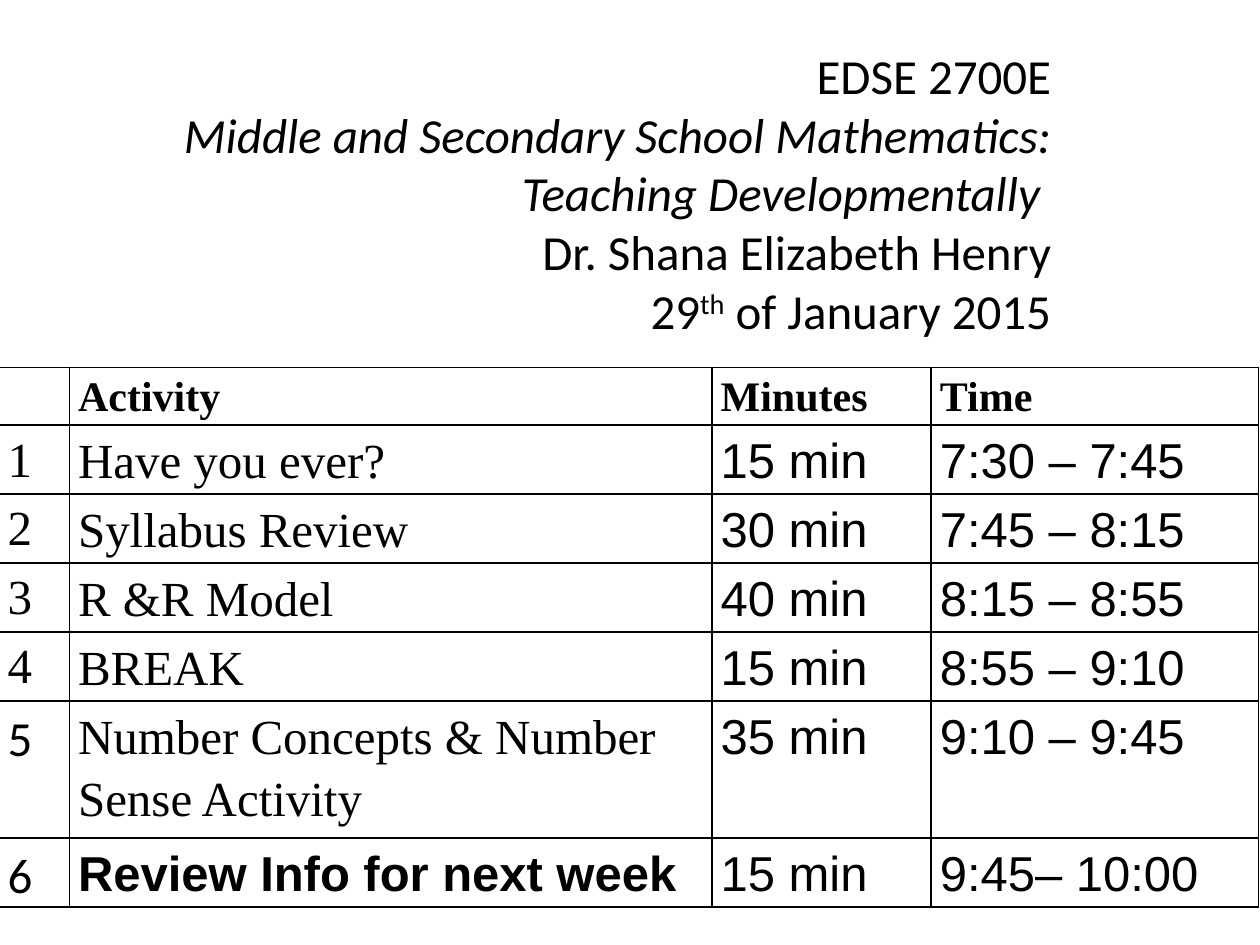
from lxml.etree import fromstring
from pptx import Presentation
from pptx.dml.color import RGBColor
from pptx.enum.text import MSO_ANCHOR, PP_ALIGN
from pptx.util import Inches, Pt

COLORS = {"ink": "000000", "rule": "000000"}
DRAWING_NS = "http://schemas.openxmlformats.org/drawingml/2006/main"
SERIF = {"name": "Times New Roman", "size": Pt(28)}
SANS = {"name": "Arial", "size": Pt(28)}
HUMANIST = {"name": "Calibri", "size": Pt(28)}
HEADING = {"name": "Times New Roman", "size": Pt(24), "bold": True}
CELL_MARGINS = {"margin_left": Inches(0.07), "margin_right": Inches(0.07),
                "margin_top": Inches(0.01), "margin_bottom": 0,
                "vertical_anchor": MSO_ANCHOR.TOP}
CELL_SPACING = {"line_spacing": 1.15, "space_after": Pt(10)}
TIGHT_SPACING = {"line_spacing": 1.15, "space_after": Pt(0)}

COURSE_LINES = [
    [("EDSE 2700E", {})],
    [("Middle and Secondary School Mathematics: Teaching Developmentally ", {"italic": True})],
    [("Dr. Shana Elizabeth Henry", {})],
    [("29", {}), ("th", {"baseline": "30000"}), (" of January 2015", {})],
]
HEADINGS = ["", "Activity", "Minutes", "Time"]
AGENDA = [
    ("Have you ever?", "15 min", "7:30 – 7:45"),
    ("Syllabus Review", "30 min", "7:45 – 8:15"),
    ("R &R Model", "40 min", "8:15 – 8:55"),
    ("BREAK", "15 min", "8:55 – 9:10"),
    ("Number Concepts & Number Sense Activity", "35 min", "9:10 – 9:45"),
    ("Review Info for next week", "15 min", "9:45– 10:00"),
]
COLUMN_SPANS = [5.6, 51, 17.4, 26]
ROW_SPANS = [6.1, 7.3, 7.3, 7.3, 7.3, 14.5, 7.3]


def apply(target, values):
    for attribute, value in values.items():
        setattr(target, attribute, value)


class AgendaSlide:
    """Holds the style and slide, placing elements on a 100 by 100 grid."""

    def __init__(self, deck):
        self.column = deck.slide_width / 100
        self.row = deck.slide_height / 100
        self.slide = deck.slides.add_slide(deck.slide_layouts[6])

    def box(self, left, top, width, height):
        return (round(left * self.column), round(top * self.row),
                round(width * self.column), round(height * self.row))

    def add_words(self, paragraph, words, style):
        run = paragraph.add_run()
        run.text = words
        values = dict(style)
        baseline = values.pop("baseline", None)
        apply(run.font, values)
        run.font.color.rgb = RGBColor.from_string(COLORS["ink"])
        if baseline:
            run.font._element.set("baseline", baseline)

    def text(self, lines, style, place):
        frame = self.slide.shapes.add_textbox(*self.box(*place)).text_frame
        frame.word_wrap = True
        for index, line in enumerate(lines):
            paragraph = frame.add_paragraph() if index else frame.paragraphs[0]
            paragraph.alignment = PP_ALIGN.RIGHT
            for words, extra in line:
                self.add_words(paragraph, words, {**style, **extra})

    def rule(self, cell):
        cell.fill.background()
        for order, side in enumerate("LRTB"):
            border = fromstring(
                f'<a:ln{side} xmlns:a="{DRAWING_NS}" w="12700"><a:solidFill>'
                f'<a:srgbClr val="{COLORS["rule"]}"/></a:solidFill></a:ln{side}>')
            cell._tc.get_or_add_tcPr().insert(order, border)

    def table(self, rows, left, top):
        place = self.box(left, top, sum(COLUMN_SPANS), sum(ROW_SPANS))
        table = self.slide.shapes.add_table(len(rows), len(COLUMN_SPANS), *place).table
        apply(table, {"first_row": False, "horz_banding": False})
        for column, span in zip(table.columns, COLUMN_SPANS):
            column.width = round(span * self.column)
        for row, span, entries in zip(table.rows, ROW_SPANS, rows):
            row.height = round(span * self.row)
            for cell, (words, style, spacing) in zip(row.cells, entries):
                apply(cell, CELL_MARGINS)
                if spacing is TIGHT_SPACING:
                    cell.margin_top = 0
                paragraph = cell.text_frame.paragraphs[0]
                apply(paragraph, spacing)
                if words:
                    self.add_words(paragraph, words, style)
                self.rule(cell)


def agenda_rows():
    yield [(heading, HEADING, TIGHT_SPACING) for heading in HEADINGS]
    for number, (activity, minutes, time) in enumerate(AGENDA, 1):
        number_style = SERIF if number < 5 else HUMANIST
        activity_style = {**SANS, "bold": True} if number == len(AGENDA) else SERIF
        yield [(str(number), number_style, TIGHT_SPACING),
               (activity, activity_style, CELL_SPACING),
               (minutes, SANS, CELL_SPACING),
               (time, SANS, CELL_SPACING)]


def main():
    deck = Presentation()
    apply(deck, {"slide_width": Inches(10), "slide_height": Inches(7.5)})
    agenda = AgendaSlide(deck)
    agenda.table(list(agenda_rows()), -0.1, 38.9)
    agenda.text(COURSE_LINES, HUMANIST, (5, 4.13, 79.4, 40.8))
    deck.save("out.pptx")


if __name__ == "__main__":
    main()
